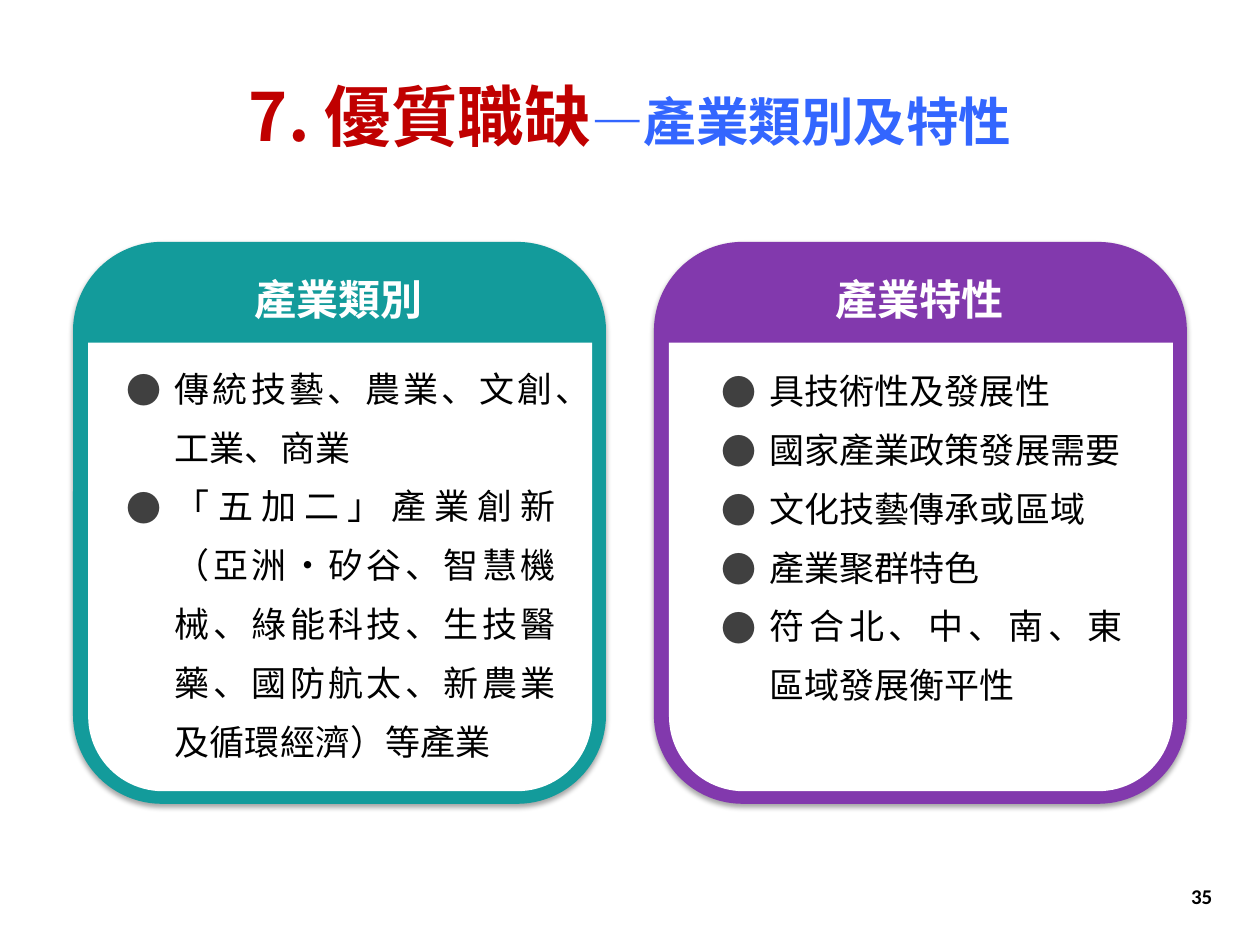
from lxml.etree import SubElement
from pptx import Presentation
from pptx.dml.color import RGBColor
from pptx.enum.shapes import MSO_SHAPE as Shape
from pptx.enum.text import MSO_ANCHOR as Anchor, PP_ALIGN as Align
from pptx.oxml.ns import qn
from pptx.util import Inches, Pt

CJK = "Noto Sans CJK SC"
TITLE = [
    ("7. 優質職缺", {"size": 38, "color": "C00000", "bold": True}),
    ("—產業類別及特性", {"size": 30, "color": "3366FF", "bold": True}),
]
PANELS = [
    {
        "heading": "產業類別",
        "color": "139B9B",
        "list_box": (0.33, 0.72, 3.6, 3.55),
        "items": [
            "傳統技藝、農業、文創、工業、商業",
            "「五加二」產業創新（亞洲•矽谷、智慧機械、綠能科技、生技醫藥、國防航太、新農業及循環經濟）等產業",
        ],
    },
    {
        "heading": "產業特性",
        "color": "8239AD",
        "list_box": (0.44, 0.72, 3.38, 3.12),
        "items": [
            "具技術性及發展性",
            "國家產業政策發展需要",
            "文化技藝傳承或區域",
            "產業聚群特色",
            "符合北、中、南、東 區域發展衡平性",
        ],
    },
]
PAGE_NUMBER = "35"
PANEL_LEFT, PANEL_TOP, PANEL_PITCH = 0.58, 1.92, 4.61
FRAME_BOX = (0, 0, 4.23, 4.46)
BODY_BOX = (0.12, 0.8, 4, 3.56)
HEADING_BOX = (0.18, 0.04, 3.86, 0.6)
ITEM_STYLE = {"size": 20, "color": "000000"}
HEADING_STYLE = {"size": 24, "color": "FFFFFF", "bold": True}
NUMBER_STYLE = {"size": 12, "color": "000000", "bold": True, "name": "Calibri"}


def rgb(value):
    return RGBColor.from_string(value)


def add_element(parent, tag, **attributes):
    return SubElement(parent, qn(tag), attributes)


def add_bullet(paragraph):
    properties = paragraph._p.get_or_add_pPr()
    properties.set("marL", str(Inches(0.38)))
    properties.set("indent", str(Inches(-0.38)))
    add_element(add_element(properties, "a:buClr"), "a:srgbClr", val="404040")
    add_element(properties, "a:buFont", typeface=CJK)
    add_element(properties, "a:buChar", char="●")


def add_run(paragraph, text, style):
    run = paragraph.add_run()
    run.text = text
    values = {"name": CJK, "bold": False, **style}
    color = values.pop("color")
    values["size"] = Pt(values["size"])
    for name, value in values.items():
        setattr(run.font, name, value)
    run.font.color.rgb = rgb(color)
    add_element(run._r.get_or_add_rPr(), "a:ea", typeface=values["name"])


def add_text(slide, box, paragraphs, align, anchor=Anchor.MIDDLE, spacing=None, bullets=False):
    frame = slide.shapes.add_textbox(*map(Inches, box)).text_frame
    frame.word_wrap = True
    frame.vertical_anchor = anchor
    for index, runs in enumerate(paragraphs):
        paragraph = frame.add_paragraph() if index else frame.paragraphs[0]
        if bullets:
            add_bullet(paragraph)
        paragraph.alignment = align
        paragraph.line_spacing = spacing
        for text, style in runs:
            add_run(paragraph, text, style)


def add_block(slide, kind, box, color):
    shape = slide.shapes.add_shape(kind, *map(Inches, box))
    shape.shadow.inherit = False
    shape.fill.solid()
    shape.fill.fore_color.rgb = rgb(color)
    shape.line.fill.background()
    return shape


def add_shadow(shape):
    effects = shape._element.spPr.find(qn("a:effectLst"))
    shadow = add_element(effects, "a:outerShdw", blurRad=str(Pt(3.1)), dist=str(Pt(1.8)),
                         dir="5400000", algn="t", rotWithShape="0")
    color = add_element(shadow, "a:srgbClr", val="000000")
    add_element(color, "a:alpha", val="35000")


def add_panel(slide, panel, left):
    def place(box):
        return (left + box[0], PANEL_TOP + box[1], *box[2:])

    frame = add_block(slide, Shape.ROUNDED_RECTANGLE, place(FRAME_BOX), panel["color"])
    add_shadow(frame)
    body = add_block(slide, Shape.ROUND_2_SAME_RECTANGLE, place(BODY_BOX), "FFFFFF")
    body.adjustments[0], body.adjustments[1] = 0, 0.1667
    items = [[(item, ITEM_STYLE)] for item in panel["items"]]
    add_text(slide, place(panel["list_box"]), items, Align.JUSTIFY, spacing=1.4, bullets=True)
    add_text(slide, place(HEADING_BOX), [[(panel["heading"], HEADING_STYLE)]],
             Align.CENTER, Anchor.TOP, 1.4)


def main():
    presentation = Presentation()
    presentation.slide_width, presentation.slide_height = Inches(10), Inches(7.5)
    slide = presentation.slides.add_slide(presentation.slide_layouts[6])
    add_text(slide, (0, 0.62, 10, 0.59), [TITLE], Align.CENTER)
    for index, panel in enumerate(PANELS):
        add_panel(slide, panel, PANEL_LEFT + index * PANEL_PITCH)
    add_text(slide, (7.39, 6.91, 2.33, 0.4), [[(PAGE_NUMBER, NUMBER_STYLE)]], Align.RIGHT)
    presentation.save("out.pptx")


if __name__ == "__main__":
    main()
